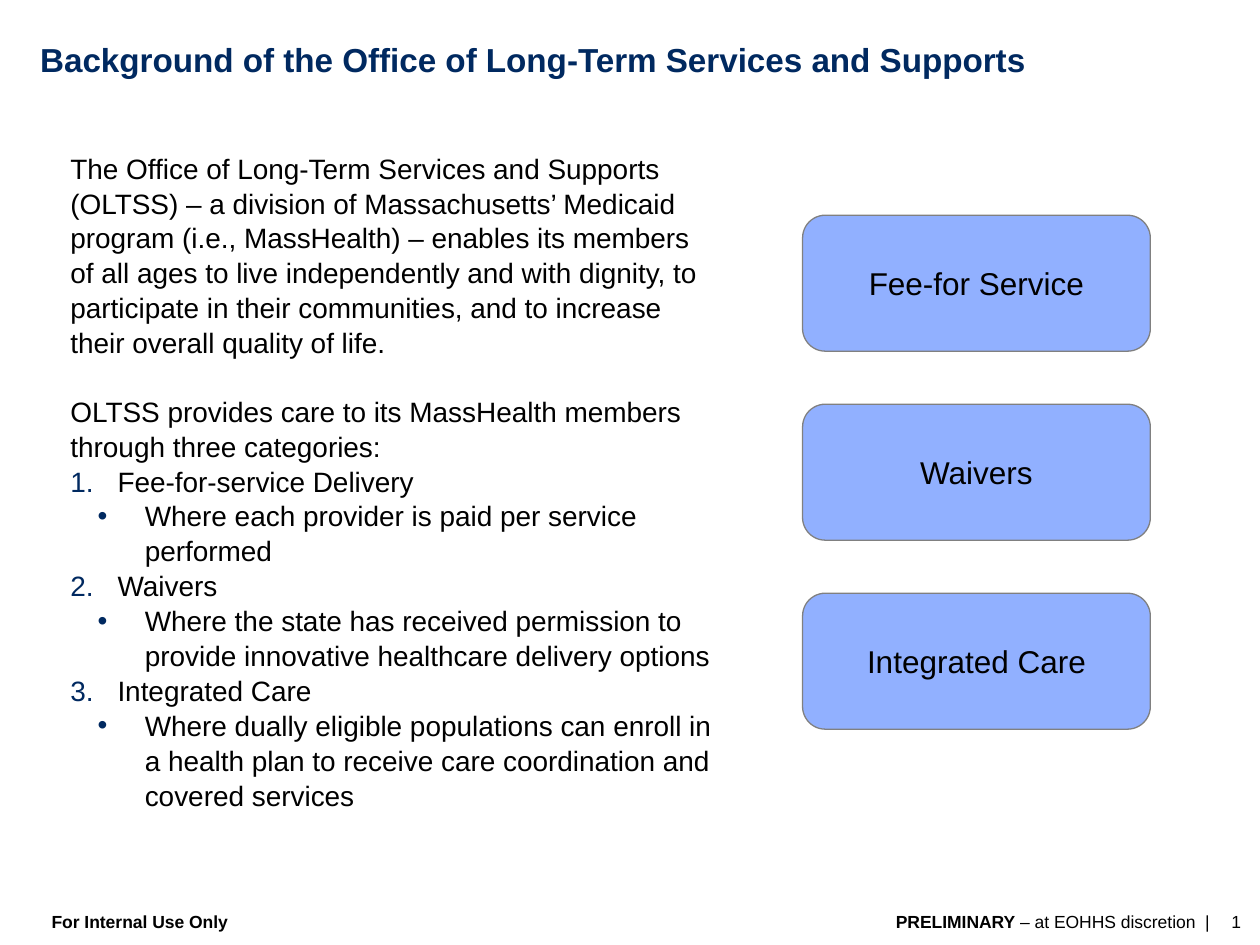
from lxml import etree
from pptx import Presentation
from pptx.dml.color import RGBColor
from pptx.enum.shapes import MSO_SHAPE
from pptx.enum.text import MSO_ANCHOR, PP_ALIGN
from pptx.oxml.ns import qn
from pptx.util import Cm, Pt

ROUND = MSO_SHAPE.ROUNDED_RECTANGLE
MIDDLE = MSO_ANCHOR.MIDDLE
CENTER, RIGHT = PP_ALIGN.CENTER, PP_ALIGN.RIGHT
COLORS = {"navy": "002960", "black": "000000", "blue": "91B0FF", "gray": "808080"}


def style(para, size, color="black", bold=False):
    font = para.font
    font.name = "Arial"
    font.size = Pt(size)
    font.bold = bold
    font.color.rgb = RGBColor.from_string(COLORS[color])


def add_box(left, top, width, height, inset=0):
    box = slide.shapes.add_textbox(Cm(left), Cm(top), Cm(width), Cm(height))
    frame = box.text_frame
    frame.word_wrap = True
    frame.margin_left = frame.margin_right = Cm(inset)
    frame.margin_top = frame.margin_bottom = Cm(inset / 2)
    return frame


deck = Presentation()
deck.slide_width, deck.slide_height = Cm(25.4), Cm(19.05)
slide = deck.slides.add_slide(deck.slide_layouts[6])

title = add_box(0.81, 0.79, 22.38, 0.84).paragraphs[0]
title.text = "Background of the Office of Long-Term Services and Supports"
style(title, 19, "navy", True)

lines = [
    ("plain", "The Office of Long-Term Services and Supports (OLTSS) – a division of Massachusetts’ Medicaid program (i.e., MassHealth) – enables its members of all ages to live independently and with dignity, to participate in their communities, and to increase their overall quality of life."),
    ("plain", "OLTSS provides care to its MassHealth members through three categories:"),
    ("number", "Fee-for-service Delivery"),
    ("bullet", "Where each provider is paid per service performed"),
    ("number", "Waivers"),
    ("bullet", "Where the state has received permission to provide innovative healthcare delivery options"),
    ("number", "Integrated Care"),
    ("bullet", "Where dually eligible populations can enroll in a health plan to receive care coordination and covered services"),
]
marks = {
    "number": (0, 0.95, "a:buAutoNum", "type", "arabicPeriod"),
    "bullet": (1, 1.5, "a:buChar", "char", "•"),
}
body = add_box(1.42, 3.02, 12.98, 13)
for i, (kind, text) in enumerate(lines):
    para = body.paragraphs[0] if i == 0 else body.add_paragraph()
    para.text = text
    para.line_spacing = 1.04
    para.space_before = Pt(19.2 if i == 1 else 0)
    if kind in marks:
        level, left, tag, key, value = marks[kind]
        para.level = level
        props = para._p.get_or_add_pPr()
        props.set("marL", str(Cm(left)))
        props.set("indent", str(Cm(-0.95)))
        tint = etree.SubElement(props, qn("a:buClr"))
        etree.SubElement(tint, qn("a:srgbClr"), val=COLORS["navy"])
        etree.SubElement(props, qn("a:buFont"), typeface="Arial")
        etree.SubElement(props, qn(tag)).set(key, value)
    style(para, 16)

for i, name in enumerate(["Fee-for Service", "Waivers", "Integrated Care"]):
    card = slide.shapes.add_shape(ROUND, Cm(16.18), Cm(4.34 + 3.81 * i), Cm(7.01), Cm(2.74))
    card.shadow.inherit = False
    card.fill.solid()
    card.fill.fore_color.rgb = RGBColor.from_string(COLORS["blue"])
    card.line.color.rgb = RGBColor.from_string(COLORS["gray"])
    card.line.width = Pt(0.75)
    card.text_frame.vertical_anchor = MIDDLE
    para = card.text_frame.paragraphs[0]
    para.text = name
    para.alignment = CENTER
    style(para, 18)

notice = add_box(0.79, 18.24, 6.55, 0.69, 0.25).paragraphs[0]
notice.text = "For Internal Use Only"
style(notice, 10, bold=True)

status = add_box(18.06, 18.36, 6.55, 0.43).paragraphs[0]
for text, bold in [("PRELIMINARY", True), (" – at EOHHS discretion  |", False)]:
    run = status.add_run()
    run.text = text
    run.font.bold = bold
style(status, 10)

page = add_box(24.56, 18.36, 0.46, 0.43).paragraphs[0]
page.text = "1"
page.alignment = RIGHT
style(page, 10)

deck.save("out.pptx")
